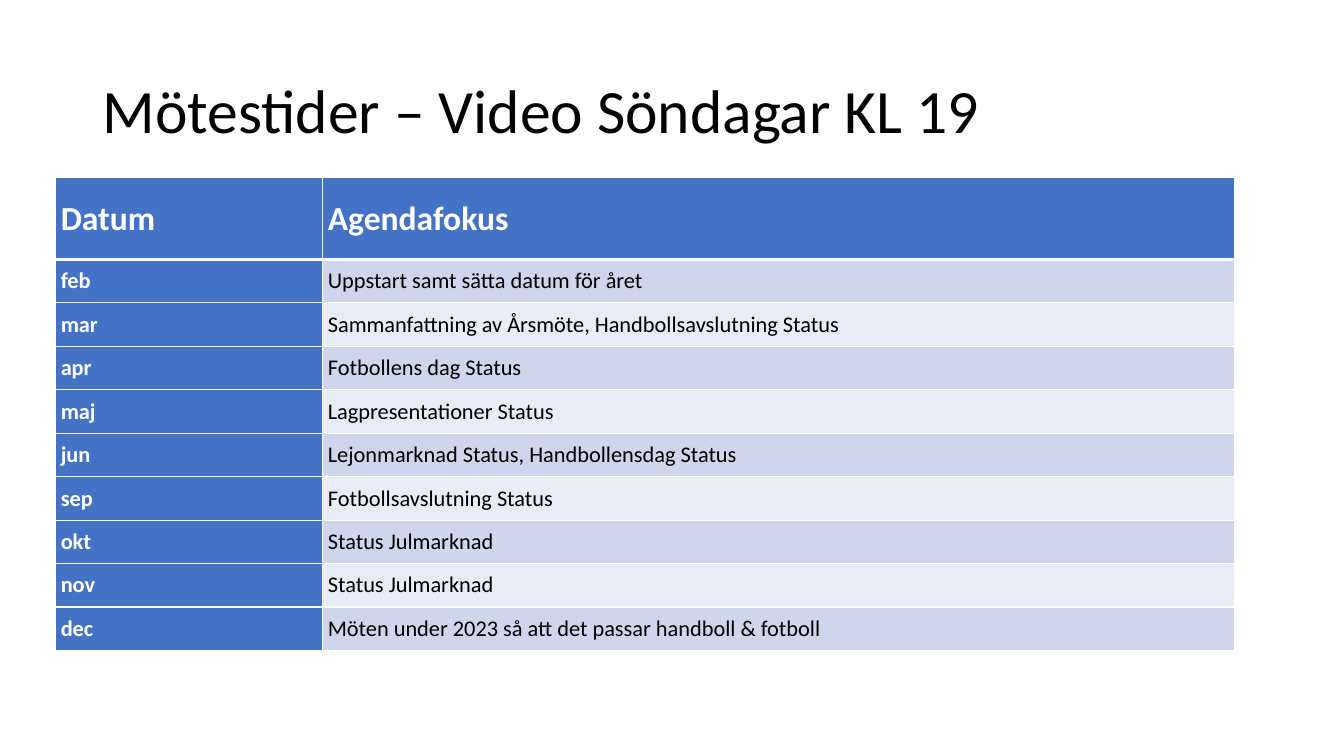
from dataclasses import dataclass

from lxml import etree
from pptx import Presentation
from pptx import util as u
from pptx.dml import color
from pptx.enum import text
from pptx.oxml import ns


@dataclass(frozen=True)
class Theme:
    font: str = "Calibri"
    dark: str = "000000"
    light: str = "FFFFFF"
    accent: str = "4472C4"
    bands: tuple = ("CFD5EA", "E9EBF5")
    title: int = 44
    header: int = 24
    body: int = 16
    rule: int = 1
    header_rule: int = 3


THEME = Theme()

TITLE = "Mötestider – Video Söndagar KL 19"
HEADER = ("Datum", "Agendafokus")
MEETINGS = [
    ("feb", "Uppstart samt sätta datum för året"),
    ("mar", "Sammanfattning av Årsmöte, Handbollsavslutning Status"),
    ("apr", "Fotbollens dag Status"),
    ("maj", "Lagpresentationer Status"),
    ("jun", "Lejonmarknad Status, Handbollensdag Status"),
    ("sep", "Fotbollsavslutning Status"),
    ("okt", "Status Julmarknad"),
    ("nov", "Status Julmarknad"),
    ("dec", "Möten under 2023 så att det passar handboll & fotboll"),
]


def add_run(p, words, size, rgb, bold=False):
    r = p.add_run()
    r.text = words
    r.font.name = THEME.font
    r.font.size = u.Pt(size)
    r.font.bold = bold
    r.font.color.rgb = color.RGBColor.from_string(rgb)


def set_borders(cell, top, bottom):
    tc_pr = cell._tc.get_or_add_tcPr()
    widths = {"lnL": THEME.rule, "lnR": THEME.rule, "lnT": top, "lnB": bottom}
    for side, width in widths.items():
        ln = etree.SubElement(tc_pr, ns.qn(f"a:{side}"), w=str(u.Pt(width)))
        fill = etree.SubElement(ln, ns.qn("a:solidFill"))
        etree.SubElement(fill, ns.qn("a:srgbClr"), val=THEME.light)


def format_cell(cell, words, row, col):
    is_header = row == 0
    is_label = is_header or col == 0
    cell.vertical_anchor = text.MSO_ANCHOR.MIDDLE
    cell.margin_left = cell.margin_right = u.Pt(3.6)
    cell.margin_top = cell.margin_bottom = u.Pt(0)
    set_borders(
        cell,
        THEME.header_rule if row == 1 else THEME.rule,
        THEME.header_rule if is_header else THEME.rule,
    )
    cell.fill.solid()
    background = THEME.accent if is_label else THEME.bands[(row - 1) % 2]
    cell.fill.fore_color.rgb = color.RGBColor.from_string(background)
    add_run(
        cell.text_frame.paragraphs[0],
        words,
        THEME.header if is_header else THEME.body,
        THEME.light if is_label else THEME.dark,
        is_label,
    )


def place_title(s, left, top, width, height):
    sp = s.shapes.title
    sp.left, sp.top = u.Pt(left), u.Pt(top)
    sp.width, sp.height = u.Pt(width), u.Pt(height)
    tf = sp.text_frame
    tf.word_wrap = True
    tf.auto_size = text.MSO_AUTO_SIZE.NONE
    tf.vertical_anchor = text.MSO_ANCHOR.MIDDLE
    p = tf.paragraphs[0]
    p.alignment = text.PP_ALIGN.LEFT
    p.line_spacing = 0.9
    add_run(p, TITLE, THEME.title, THEME.dark)


def place_agenda(s, left, top, width, height, date_width=190.8, header_height=58.3):
    rows = [HEADER, *MEETINGS]
    table = s.shapes.add_table(
        len(rows), len(HEADER), u.Pt(left), u.Pt(top), u.Pt(width), u.Pt(height)
    ).table
    table.first_col = True
    table.columns[0].width = u.Pt(date_width)
    table.columns[1].width = u.Pt(width - date_width)
    row_height = (height - header_height) / len(MEETINGS)
    for i, row in enumerate(rows):
        table.rows[i].height = u.Pt(row_height if i else header_height)
        for j, words in enumerate(row):
            format_cell(table.cell(i, j), words, i, j)


def main():
    prs = Presentation()
    prs.slide_width, prs.slide_height = u.Pt(960), u.Pt(540)
    s = prs.slides.add_slide(prs.slide_layouts.get_by_name("Title Only"))
    place_title(s, 66, 28.8, 828, 104.4)
    place_agenda(s, 39.8, 127, 842.4, 337.7)
    prs.save("out.pptx")


if __name__ == "__main__":
    main()
